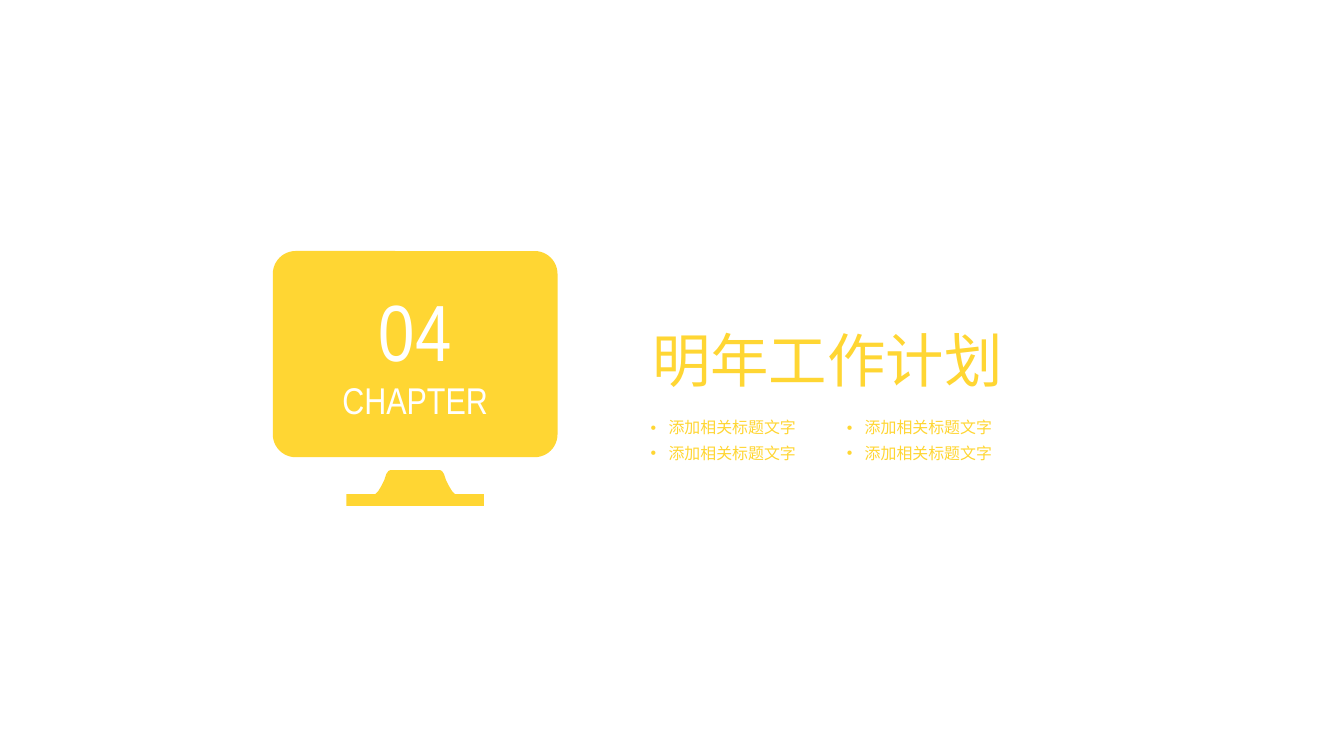
from typing import NamedTuple

from pptx import Presentation
from pptx.dml.color import RGBColor
from pptx.enum.shapes import MSO_SHAPE as Preset
from pptx.enum.text import MSO_ANCHOR as Anchor, MSO_AUTO_SIZE as AutoSize, PP_ALIGN as Align
from pptx.shapes.base import BaseShape
from pptx.slide import Slide
from pptx.text.text import TextFrame
from pptx.util import Emu, Pt

EMU_PER_PX = 9525
COLORS = {"yellow": "FFD633", "white": "FFFFFF"}
TWO_CONTENT_LAYOUT = 3


class Box(NamedTuple):
    left: int
    top: int
    width: int
    height: int


class Line(NamedTuple):
    text: str
    size: int
    font: str = "Arial"
    color: str = "yellow"
    align: Align = Align.LEFT


MONITOR = Box(274, 252, 286, 207)
CORNER_RADIUS = 23
CHAPTER_LINES = [
    Line("04", 60, "Arial Narrow", "white", Align.CENTER),
    Line("CHAPTER", 28, "Arial Narrow", "white", Align.CENTER),
]

# Right half of the stand: distance from the monitor's axis, and y
STAND_HALF = [(69, 508), (69, 496), (40, 496), (37, 493), (34, 488),
              (31, 482), (29, 476), (27, 473), (25, 472)]

TITLE = Box(655, 325, 380, 71)
TOPICS = Box(644, 408, 190, 62)
COLUMN_PITCH = 197
TOPIC_INDENT = 18
TOPIC_LINES = [Line("添加相关标题文字", 12)] * 2


def px(value: float) -> Emu:
    return Emu(round(value * EMU_PER_PX))


def color(name: str) -> RGBColor:
    return RGBColor.from_string(COLORS[name])


def place(shape: BaseShape, box: Box) -> None:
    shape.left, shape.top, shape.width, shape.height = map(px, box)


def paint(shape: BaseShape) -> None:
    shape.fill.solid()
    shape.fill.fore_color.rgb = color("yellow")
    shape.line.fill.background()
    shape.shadow.inherit = False


def write(frame: TextFrame, lines: list[Line], anchor: Anchor = Anchor.TOP) -> None:
    frame.word_wrap = True
    frame.auto_size = AutoSize.NONE
    frame.vertical_anchor = anchor
    frame.text = "\n".join(line.text for line in lines)
    for paragraph, line in zip(frame.paragraphs, lines):
        paragraph.alignment = line.align
        paragraph.space_before = Pt(0)
        paragraph.font.size = Pt(line.size)
        paragraph.font.name = line.font
        paragraph.font.color.rgb = color(line.color)


def clear_margins(frame: TextFrame) -> None:
    frame.margin_left = frame.margin_top = frame.margin_right = frame.margin_bottom = 0


def draw_monitor(slide: Slide) -> None:
    screen = slide.shapes.add_shape(Preset.ROUNDED_RECTANGLE, *map(px, MONITOR))
    screen.adjustments[0] = CORNER_RADIUS / MONITOR.height
    paint(screen)
    clear_margins(screen.text_frame)
    screen.text_frame.margin_bottom = px(4)
    write(screen.text_frame, CHAPTER_LINES, Anchor.MIDDLE)

    axis = MONITOR.left + MONITOR.width // 2
    outline = [(axis + dx, y) for dx, y in STAND_HALF]
    outline += [(axis - dx, y) for dx, y in reversed(STAND_HALF)]
    builder = slide.shapes.build_freeform(*outline[0], scale=EMU_PER_PX)
    builder.add_line_segments(outline[1:], close=True)
    paint(builder.convert_to_shape())


def fill_title(slide: Slide) -> None:
    title = slide.shapes.title
    place(title, TITLE)
    clear_margins(title.text_frame)
    write(title.text_frame, [Line("明年工作计划", 44)])


def fill_topics(slide: Slide) -> None:
    for column, index in enumerate((1, 2)):
        topics = slide.placeholders[index]
        place(topics, TOPICS._replace(left=TOPICS.left + column * COLUMN_PITCH))
        write(topics.text_frame, TOPIC_LINES)
        for paragraph in topics.text_frame.paragraphs:
            paragraph.line_spacing = Pt(19.5)
            properties = paragraph._p.get_or_add_pPr()
            properties.set("marL", str(px(TOPIC_INDENT)))
            properties.set("indent", str(px(-TOPIC_INDENT)))


def main() -> None:
    deck = Presentation()
    deck.slide_width, deck.slide_height = px(1350), px(759)
    slide = deck.slides.add_slide(deck.slide_layouts[TWO_CONTENT_LAYOUT])
    draw_monitor(slide)
    fill_title(slide)
    fill_topics(slide)
    deck.save("out.pptx")


if __name__ == "__main__":
    main()
